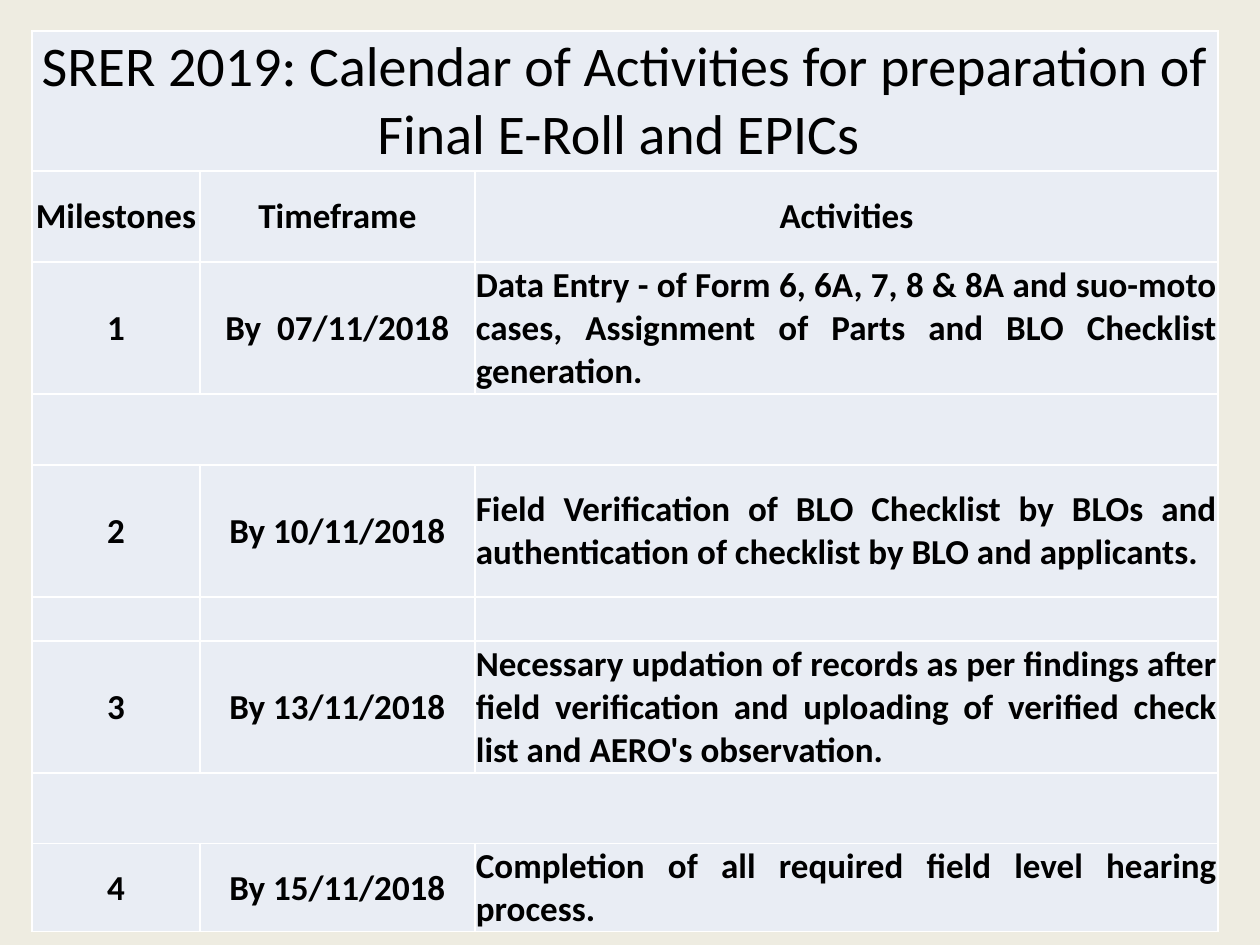
from dataclasses import dataclass

from lxml.etree import SubElement
from pptx import Presentation
from pptx.dml.color import RGBColor
from pptx.enum.text import MSO_ANCHOR, PP_ALIGN
from pptx.oxml.ns import qn
from pptx.util import Pt

EMU_PER_INCH = 914400
PX_PER_INCH = 126


def px(length):
    return round(length * EMU_PER_INCH / PX_PER_INCH)


@dataclass(frozen=True)
class Theme:
    background: str = "EEECE1"
    cell: str = "E9EDF4"
    border: str = "FFFFFF"
    text: str = "000000"
    font: str = "Calibri"
    title_size: int = 32
    body_size: int = 20
    border_width: int = 1


class SlideBuilder:
    def __init__(self, deck, theme):
        self.theme = theme
        self.slide = deck.slides.add_slide(deck.slide_layouts[6])
        backdrop = self.slide.background.fill
        backdrop.solid()
        backdrop.fore_color.rgb = RGBColor.from_string(theme.background)

    def table(self, left, top, widths, heights):
        frame = self.slide.shapes.add_table(
            len(heights), len(widths), px(left), px(top), px(sum(widths)), px(sum(heights))
        )
        grid = frame.table
        grid.first_row = False
        grid.horz_banding = False
        for column, width in zip(grid.columns, widths):
            column.width = px(width)
        for row, height in zip(grid.rows, heights):
            row.height = px(height)
        for cell in grid.iter_cells():
            self.style_cell(cell)
        return grid

    def style_cell(self, cell):
        cell.margin_left = cell.margin_right = cell.margin_top = px(1)
        cell.margin_bottom = 0
        cell.vertical_anchor = MSO_ANCHOR.MIDDLE
        properties = cell._tc.get_or_add_tcPr()
        for side in ("a:lnL", "a:lnR", "a:lnT", "a:lnB"):
            line = SubElement(properties, qn(side), w=str(Pt(self.theme.border_width)))
            paint = SubElement(line, qn("a:solidFill"))
            SubElement(paint, qn("a:srgbClr"), val=self.theme.border)
        cell.fill.solid()
        cell.fill.fore_color.rgb = RGBColor.from_string(self.theme.cell)

    def cell_text(self, cell, wording, size, bold=True, align=PP_ALIGN.CENTER):
        paragraph = cell.text_frame.paragraphs[0]
        paragraph.text = wording
        paragraph.alignment = align
        for run in paragraph.runs:
            run.font.name = self.theme.font
            run.font.size = Pt(size)
            run.font.bold = bold
            run.font.color.rgb = RGBColor.from_string(self.theme.text)


TITLE = "SRER 2019: Calendar of Activities for preparation of Final E-Roll and EPICs "
HEADINGS = ("Milestones", "Timeframe", "Activities")
MILESTONES = (
    ("1", "By  07/11/2018",
     "Data Entry - of Form 6, 6A, 7, 8 & 8A and suo-moto cases, "
     "Assignment of Parts and BLO Checklist generation."),
    ("2", "By 10/11/2018",
     "Field Verification of BLO Checklist by BLOs and authentication "
     "of checklist by BLO and applicants."),
    ("3", "By 13/11/2018",
     "Necessary updation of records as per findings after field verification "
     "and uploading of verified check list and AERO's observation."),
    ("4", "By 15/11/2018", "Completion of all required field level hearing process."),
)
COLUMN_WIDTHS = (168, 275, 743)
ROW_HEIGHTS = (140, 91, 132, 71, 132, 44, 132, 71, 88)
FULL_WIDTH_ROWS = (0, 3, 7)


def main():
    deck = Presentation()
    deck.slide_width = px(1260)
    deck.slide_height = px(945)
    theme = Theme()
    builder = SlideBuilder(deck, theme)

    calendar = builder.table(32, 31, COLUMN_WIDTHS, ROW_HEIGHTS)
    for row in FULL_WIDTH_ROWS:
        calendar.cell(row, 0).merge(calendar.cell(row, len(COLUMN_WIDTHS) - 1))

    builder.cell_text(calendar.cell(0, 0), TITLE, theme.title_size, bold=False)
    for column, heading in enumerate(HEADINGS):
        builder.cell_text(calendar.cell(1, column), heading, theme.body_size)

    alignments = (PP_ALIGN.CENTER, PP_ALIGN.CENTER, PP_ALIGN.JUSTIFY)
    for index, milestone in enumerate(MILESTONES):
        for column, (wording, align) in enumerate(zip(milestone, alignments)):
            cell = calendar.cell(2 + 2 * index, column)
            builder.cell_text(cell, wording, theme.body_size, align=align)

    deck.save("out.pptx")


if __name__ == "__main__":
    main()
